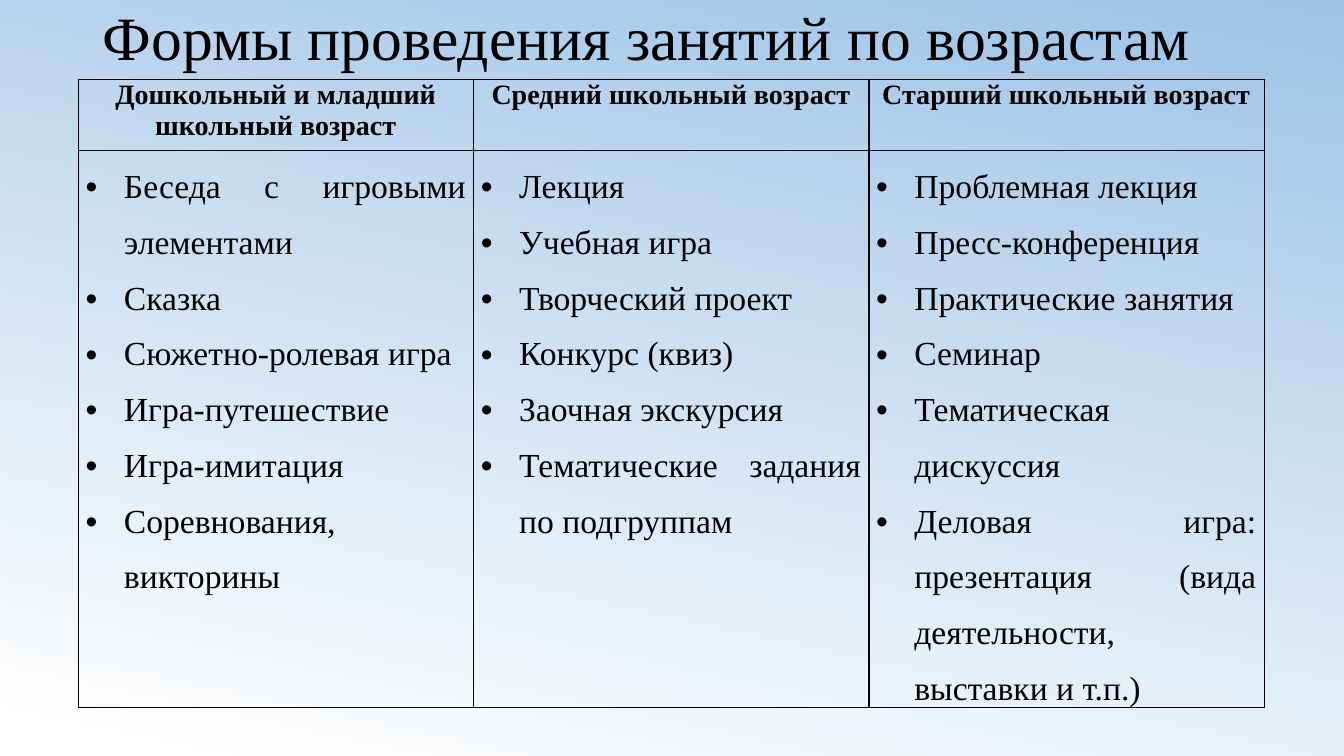
from lxml.etree import SubElement
from pptx import Presentation
from pptx.dml.color import RGBColor
from pptx.enum.text import MSO_ANCHOR, PP_ALIGN
from pptx.oxml.ns import qn
from pptx.util import Inches, Pt

COLORS = {"sky": "9DC3E6", "white": "FFFFFF", "ink": "000000"}
FACE = "Times New Roman"
COL = 3.92
ROWS = [0.7, 4.61]
HEAD = {"size": Pt(20), "bold": True}
BODY = {"size": Pt(24), "bold": False}
AGES = {
    "Дошкольный и младший школьный возраст": [
        "Беседа с игровыми элементами",
        "Сказка",
        "Сюжетно-ролевая игра",
        "Игра-путешествие",
        "Игра-имитация",
        "Соревнования, викторины",
    ],
    "Средний школьный возраст": [
        "Лекция",
        "Учебная игра",
        "Творческий проект",
        "Конкурс (квиз)",
        "Заочная экскурсия",
        "Тематические задания по подгруппам",
    ],
    "Старший школьный возраст": [
        "Проблемная лекция",
        "Пресс-конференция",
        "Практические занятия",
        "Семинар",
        "Тематическая дискуссия",
        "Деловая игра: презентация (вида деятельности, выставки и т.п.)",
    ],
}


def write(para, text, look):
    run = para.add_run()
    run.text = text
    for key, value in {"name": FACE, **look}.items():
        setattr(run.font, key, value)
    run.font.color.rgb = RGBColor.from_string(COLORS["ink"])


def frame(cell):
    props = cell._tc.get_or_add_tcPr()
    for side in ("lnL", "lnR", "lnT", "lnB"):
        line = SubElement(props, qn(f"a:{side}"), w=str(Pt(1)))
        fill = SubElement(line, qn("a:solidFill"))
        SubElement(fill, qn("a:srgbClr"), val=COLORS["ink"])
    cell.fill.background()
    look = {"margin_left": Inches(0.07), "margin_right": Inches(0.08),
            "margin_top": 0, "margin_bottom": 0,
            "vertical_anchor": MSO_ANCHOR.TOP}
    for key, value in look.items():
        setattr(cell, key, value)


deck = Presentation()
deck.slide_width, deck.slide_height = Inches(13.33), Inches(7.5)
slide = deck.slides.add_slide(deck.slide_layouts[5])

back = slide.background.fill
back.gradient()
back.gradient_angle = 258
for stop, name, place in zip(back.gradient_stops, ("sky", "white"), (0, 0.97)):
    stop.color.rgb = RGBColor.from_string(COLORS[name])
    stop.position = place

title = slide.shapes.title
place = {"left": 0.92, "top": -0.32, "width": 11.5, "height": 1.45}
for key, value in place.items():
    setattr(title, key, Inches(value))
title.text_frame.vertical_anchor = MSO_ANCHOR.MIDDLE
para = title.text_frame.paragraphs[0]
para.alignment = PP_ALIGN.LEFT
para.line_spacing = 0.9
write(para, "Формы проведения занятий по возрастам", {"size": Pt(44)})

table = slide.shapes.add_table(
    len(ROWS), len(AGES), Inches(0.78), Inches(0.79),
    Inches(COL * len(AGES)), Inches(sum(ROWS))).table
table.first_row = table.horz_banding = False
for row, height in zip(table.rows, ROWS):
    row.height = Inches(height)

for col, (age, forms) in enumerate(AGES.items()):
    table.columns[col].width = Inches(COL)
    head, body = table.cell(0, col), table.cell(1, col)
    frame(head)
    frame(body)
    para = head.text_frame.paragraphs[0]
    para.alignment = PP_ALIGN.CENTER
    write(para, age, HEAD)
    for index, form in enumerate(forms):
        text = body.text_frame
        para = text.add_paragraph() if index else text.paragraphs[0]
        para.alignment = PP_ALIGN.JUSTIFY
        para.line_spacing = 1.5
        props = para._p.get_or_add_pPr()
        props.set("marL", str(Inches(0.38)))
        props.set("indent", str(Inches(-0.38)))
        SubElement(props, qn("a:buFont"), typeface="Arial")
        SubElement(props, qn("a:buChar"), char="•")
        write(para, form, BODY)

deck.save("out.pptx")
